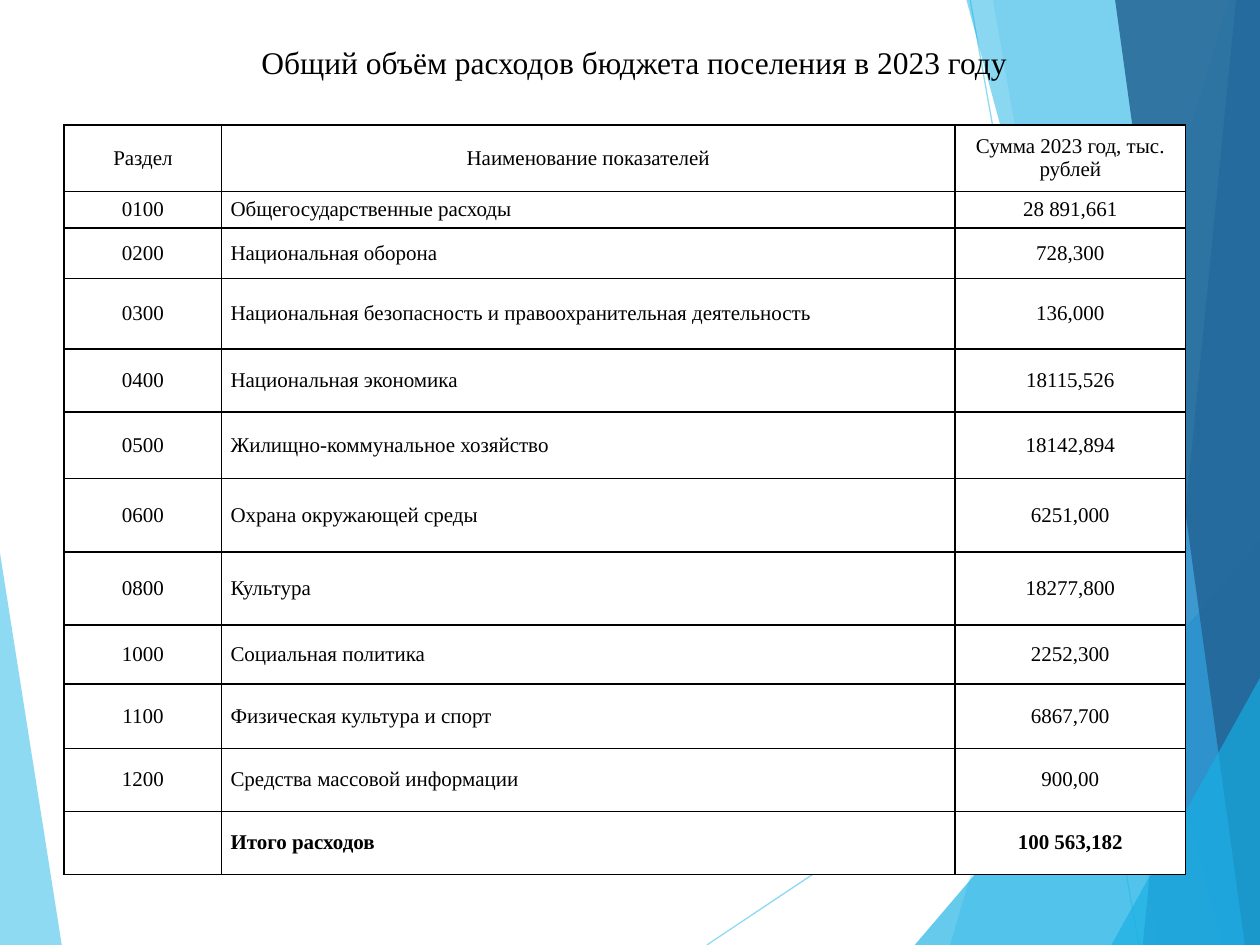
from dataclasses import dataclass

from lxml.etree import SubElement
from pptx import Presentation
from pptx.dml.color import RGBColor
from pptx.enum.shapes import MSO_CONNECTOR
from pptx.enum.text import MSO_ANCHOR, PP_ALIGN
from pptx.oxml.ns import qn
from pptx.util import Inches, Pt


@dataclass(frozen=True)
class Theme:
    font: str = "Times New Roman"
    ink: str = "000000"
    paper: str = "FFFFFF"
    sky: str = "5FCBEF"
    cyan: str = "17B0E4"
    blue: str = "2E83C3"
    navy: str = "226292"
    title_size: float = 18
    body_size: float = 12
    hairline: float = 0.75
    border: float = 1


class SlideBuilder:
    COLUMNS, ROWS = 100, 75

    def __init__(self, prs, theme):
        self.theme = theme
        self.col = prs.slide_width / self.COLUMNS
        self.row = prs.slide_height / self.ROWS
        self.s = prs.slides.add_slide(prs.slide_layouts[6])
        self.paint(self.s.background.fill, theme.paper)

    def place(self, x, y):
        return round(x * self.col), round(y * self.row)

    def paint(self, fill, color, opacity=100):
        fill.solid()
        fill.fore_color.rgb = RGBColor.from_string(color)
        if opacity < 100:
            for node in fill._xPr.iter(qn("a:srgbClr")):
                SubElement(node, qn("a:alpha"), val=str(opacity * 1000))

    def add_text(self, tf, text, size, align, bold=False):
        p = tf.paragraphs[0]
        p.alignment = align
        r = p.add_run()
        r.text = text
        for name, value in {"name": self.theme.font, "size": Pt(size), "bold": bold}.items():
            setattr(r.font, name, value)
        r.font.color.rgb = RGBColor.from_string(self.theme.ink)

    def facet(self, points, color, opacity):
        start, *rest = [self.place(x, y) for x, y in points]
        builder = self.s.shapes.build_freeform(*start)
        builder.add_line_segments(rest, close=True)
        sp = builder.convert_to_shape()
        sp.shadow.inherit = False
        sp.line.fill.background()
        self.paint(sp.fill, color, opacity)

    def ray(self, start, end, color, opacity):
        sp = self.s.shapes.add_connector(
            MSO_CONNECTOR.STRAIGHT, *self.place(*start), *self.place(*end))
        sp.line.width = Pt(self.theme.hairline)
        self.paint(sp.line.fill, color, opacity)
        SubElement(sp._element.spPr, qn("a:effectLst"))

    def title(self, text, x, y, width, height):
        sp = self.s.shapes.add_textbox(*self.place(x, y), *self.place(width, height))
        tf = sp.text_frame
        tf.word_wrap = True
        tf.vertical_anchor = MSO_ANCHOR.TOP
        self.add_text(tf, text, self.theme.title_size, PP_ALIGN.CENTER)

    def outline(self, cell):
        tcPr = cell._tc.get_or_add_tcPr()
        for i, side in enumerate(("lnL", "lnR", "lnT", "lnB")):
            ln = tcPr.makeelement(qn(f"a:{side}"), {"w": str(Pt(self.theme.border))})
            fill = SubElement(ln, qn("a:solidFill"))
            SubElement(fill, qn("a:srgbClr"), val=self.theme.ink)
            tcPr.insert(i, ln)

    def table(self, x, y, widths, heights, records):
        frame = self.s.shapes.add_table(
            len(heights), len(widths), *self.place(x, y),
            *self.place(sum(widths), sum(heights)))
        table = frame.table
        table.first_row = table.horz_banding = False
        for column, width in zip(table.columns, widths):
            column.width = round(width * self.col)
        for row, height in zip(table.rows, heights):
            row.height = round(height * self.row)
        style = {"margin_left": Inches(0.07), "margin_right": Inches(0.07),
                 "margin_top": 0, "margin_bottom": 0,
                 "vertical_anchor": MSO_ANCHOR.MIDDLE}
        last = len(records) - 1
        for i, record in enumerate(records):
            for j, text in enumerate(record):
                cell = table.cell(i, j)
                for name, value in style.items():
                    setattr(cell, name, value)
                self.paint(cell.fill, self.theme.paper)
                self.outline(cell)
                if text:
                    align = PP_ALIGN.LEFT if i and j == 1 else PP_ALIGN.CENTER
                    self.add_text(cell.text_frame, text, self.theme.body_size, align, i == last)


EXPENSES = [
    ("Раздел", "Наименование показателей", "Сумма 2023 год, тыс. рублей"),
    ("0100", "Общегосударственные расходы", "28 891,661"),
    ("0200", "Национальная оборона", "728,300"),
    ("0300", "Национальная безопасность и правоохранительная деятельность", "136,000"),
    ("0400", "Национальная экономика", "18115,526"),
    ("0500", "Жилищно-коммунальное хозяйство", "18142,894"),
    ("0600", "Охрана окружающей среды", "6251,000"),
    ("0800", "Культура", "18277,800"),
    ("1000", "Социальная политика", "2252,300"),
    ("1100", "Физическая культура и спорт", "6867,700"),
    ("1200", "Средства массовой информации", "900,00"),
    ("", "Итого расходов", "100 563,182"),
]
COLUMN_WIDTHS = [12.5, 58.2, 18.3]
ROW_HEIGHTS = [5.3, 2.9, 4, 5.6, 5, 5.3, 5.8, 5.8, 4.7, 5.1, 5, 5]


def main():
    prs = Presentation()
    prs.slide_width, prs.slide_height = Inches(10), Inches(7.5)
    theme = Theme()
    slide = SlideBuilder(prs, theme)
    right, bottom = slide.COLUMNS, slide.ROWS

    slide.facet([(0, 43.9), (4.9, bottom), (0, bottom)], theme.sky, 70)
    slide.ray((56.1, bottom), (right, 45.7), theme.sky, 70)
    slide.ray((77, 0), (90.4, bottom), theme.sky, 70)
    facets = [
        (97.5, 0, 75.4, theme.sky, 36),
        (78.8, 0, 91.9, theme.sky, 20),
        (right, 42.9, 72.6, theme.cyan, 66),
        (76.7, 0, 97, theme.cyan, 50),
        (98.1, 0, 90.7, theme.blue, 70),
        (88.5, 0, 98.8, theme.navy, 82),
        (right, 53.8, 88.2, theme.cyan, 66),
    ]
    for peak, top, foot, color, opacity in facets:
        corners = [(peak, top), (foot, bottom), (right, bottom), (right, top)]
        slide.facet(corners, color, opacity)

    slide.title("Общий объём расходов бюджета поселения в 2023 году", 3.5, 2.9, 93.7, 4.7)
    slide.table(5.1, 9.9, COLUMN_WIDTHS, ROW_HEIGHTS, EXPENSES)
    prs.save("out.pptx")


if __name__ == "__main__":
    main()
